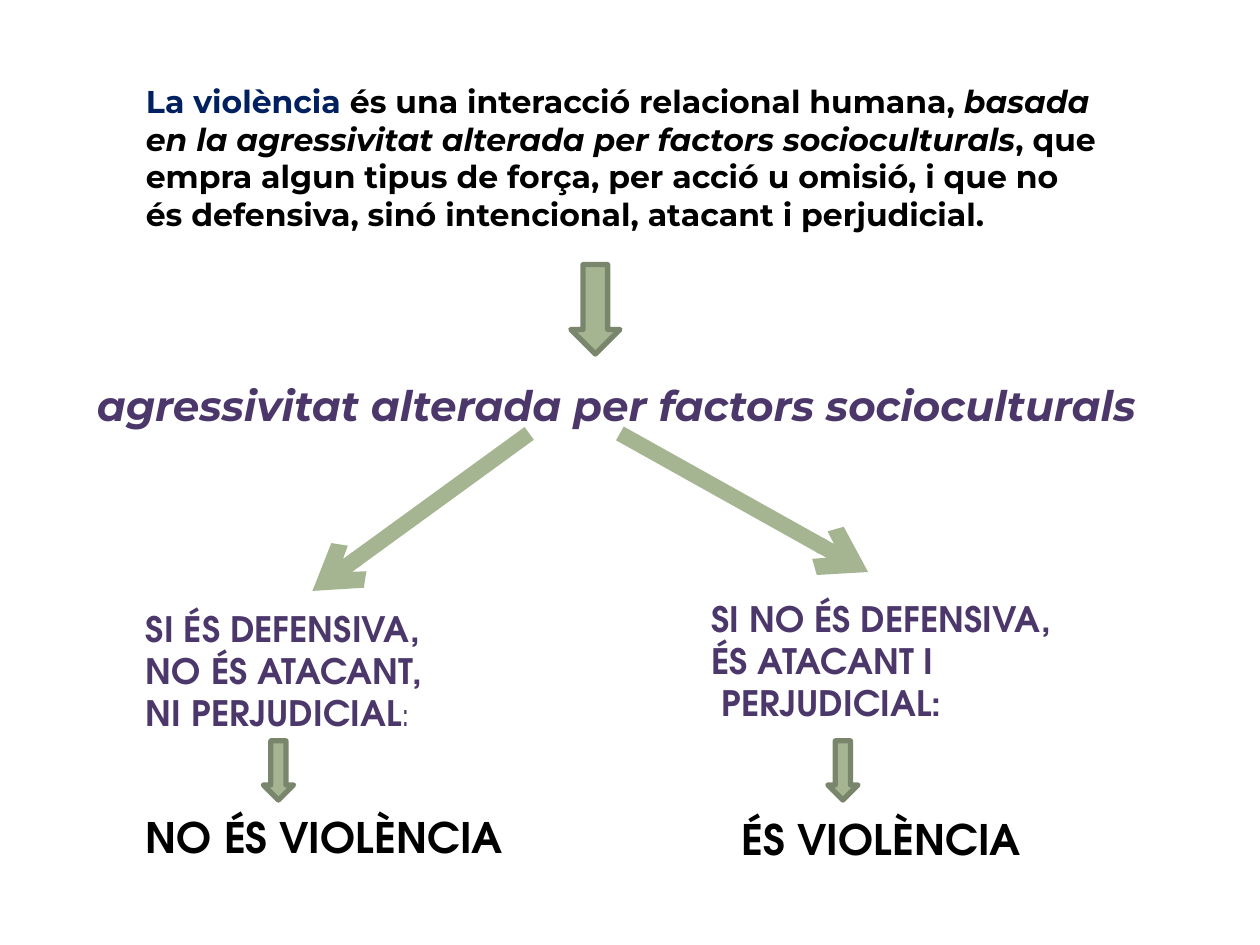
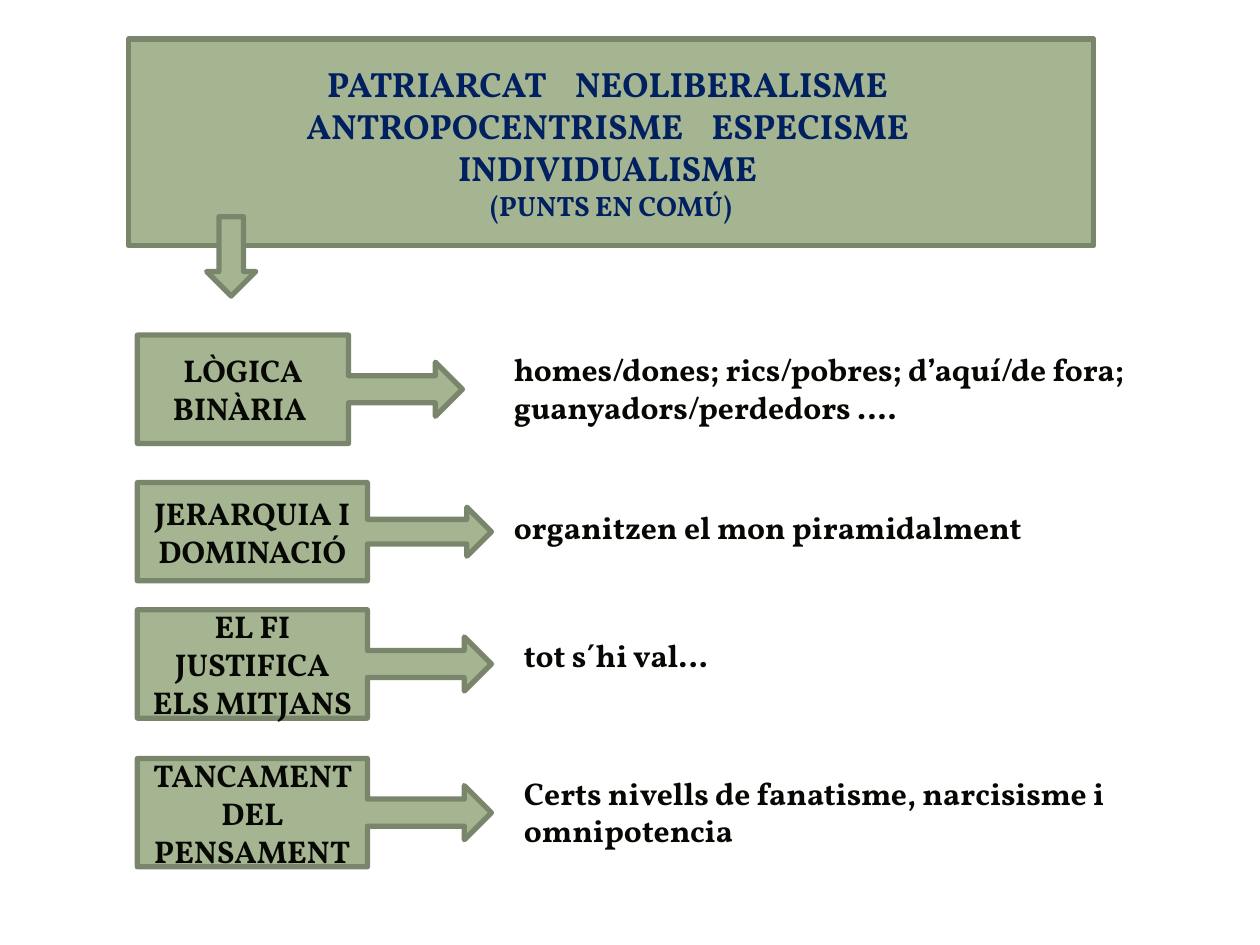
from lxml import etree
from pptx import Presentation
from pptx.dml.color import RGBColor
from pptx.enum.shapes import MSO_CONNECTOR as Connector, MSO_SHAPE as Shape
from pptx.enum.text import MSO_ANCHOR as Anchor, PP_ALIGN as Align
from pptx.oxml.ns import qn
from pptx.util import Inches, Pt

COLORS = {
    "sage": "A5B592",
    "sage_dark": "7A866C",
    "navy": "002060",
    "purple": "4C376B",
    "black": "000000",
    "ink": "070804",
}
SANS, CAPS, SERIF = "Montserrat", "TeX Gyre Adventor", "Vollkorn"
WORD_GAP = (" ", {"spacing": 12})


def color(name):
    return RGBColor.from_string(COLORS[name])


def add_run(paragraph, text, font, size, ink, bold=True, italic=False, spacing=0):
    run = paragraph.add_run()
    run.text = text
    run.font.name = font
    run.font.size = Pt(size)
    run.font.bold = bold
    run.font.italic = italic
    run.font.color.rgb = color(ink)
    if spacing:
        run._r.get_or_add_rPr().set("spc", str(spacing * 100))


def write_text(frame, paragraphs, align=Align.LEFT, **style):
    frame.word_wrap = True
    for index, runs in enumerate(paragraphs):
        paragraph = frame.paragraphs[0] if index == 0 else frame.add_paragraph()
        paragraph.alignment = align
        for run in [runs] if isinstance(runs, str) else runs:
            text, changes = (run, {}) if isinstance(run, str) else run
            add_run(paragraph, text, **{**style, **changes})


def add_text(slide, box, *paragraphs, **style):
    text_box = slide.shapes.add_textbox(*map(Inches, box))
    write_text(text_box.text_frame, paragraphs, **style)


def add_block(slide, kind, box, *paragraphs, **style):
    shape = slide.shapes.add_shape(kind, *map(Inches, box))
    shape.shadow.inherit = False
    shape.fill.solid()
    shape.fill.fore_color.rgb = color("sage")
    shape.line.color.rgb = color("sage_dark")
    shape.line.width = Pt(3)
    if paragraphs:
        shape.text_frame.vertical_anchor = Anchor.MIDDLE
        write_text(shape.text_frame, paragraphs, align=Align.CENTER, **style)


def add_branch(slide, start, end):
    connector = slide.shapes.add_connector(
        Connector.STRAIGHT, *map(Inches, start + end))
    connector.line.color.rgb = color("sage")
    connector.line.width = Pt(9)
    line = connector.line._get_or_add_ln()
    etree.SubElement(line, qn("a:tailEnd"), type="arrow")
    etree.SubElement(connector._element.spPr, qn("a:effectLst"))


def build_violence_slide(slide):
    add_text(
        slide, (1.06, 0.6, 7.8, 1.62),
        [("La violència ", {"ink": "navy"}),
         "és una interacció relacional humana, ",
         ("basada en la agressivitat alterada per factors socioculturals",
          {"italic": True}),
         ", que empra algun tipus de força, per acció u omisió, i que no és "
         "defensiva, sinó intencional, atacant i perjudicial."],
        font=SANS, size=18, ink="black")
    add_text(slide, (0.67, 2.96, 8.98, 0.5),
             "agressivitat alterada per factors socioculturals",
             font=SANS, size=24, ink="purple", italic=True)
    add_block(slide, Shape.DOWN_ARROW, (4.53, 2.1, 0.39, 0.71))

    condition = {"font": CAPS, "size": 20, "ink": "purple"}
    add_text(slide, (1.06, 4.77, 3.22, 1.1),
             "SI ÉS DEFENSIVA,", "NO ÉS ATACANT,",
             ["NI PERJUDICIAL", (":", {"size": 18, "bold": False})], **condition)
    add_text(slide, (5.55, 4.69, 3.21, 1.1),
             "SI NO ÉS DEFENSIVA,", "ÉS ATACANT I", " PERJUDICIAL:", **condition)

    conclusion = {"font": CAPS, "size": 24, "ink": "black"}
    add_text(slide, (1.06, 6.39, 3.22, 0.5), "NO ÉS VIOLÈNCIA", **conclusion)
    add_text(slide, (5.55, 6.41, 2.89, 0.5), "ÉS VIOLÈNCIA",
             align=Align.CENTER, **conclusion)

    add_branch(slide, (4.92, 3.44), (6.89, 4.54))
    add_branch(slide, (4.2, 3.44), (2.48, 4.69))
    for left in (2.09, 6.57):
        add_block(slide, Shape.DOWN_ARROW, (left, 5.88, 0.24, 0.47))


def build_common_points_slide(slide):
    add_block(
        slide, Shape.FLOWCHART_PROCESS, (1.02, 0.31, 7.66, 1.64),
        ["PATRIARCAT", WORD_GAP, "NEOLIBERALISME "],
        ["ANTROPOCENTRISME", WORD_GAP, "ESPECISME "],
        "INDIVIDUALISME ",
        [("(PUNTS EN COMÚ)", {"size": 16})],
        font=SERIF, size=20, ink="navy")
    add_block(slide, Shape.DOWN_ARROW, (1.64, 1.72, 0.39, 0.63))

    points = [
        ("LÒGICA BINÀRIA ", (2.66, 2.58, 0.86),
         "homes/dones; rics/pobres; d’aquí/de fora; guanyadors/perdedors ….",
         (3.98, 2.73, 5.23, 0.71)),
        ("JERARQUIA I DOMINACIÓ", (3.83, 2.81, 0.78),
         "organitzen el mon piramidalment", (3.98, 3.98, 5.31, 0.4)),
        ("EL FI JUSTIFICA ELS MITJANS", (4.84, 2.81, 0.86),
         "tot s´hi val…", (4.06, 5, 5.55, 0.71)),
        ("TANCAMENT DEL PENSAMENT", (6.02, 2.81, 0.86),
         "Certs nivells de fanatisme, narcisisme i omnipotencia",
         (4.06, 6.09, 5.55, 1.01)),
    ]
    style = {"font": SERIF, "size": 18, "ink": "ink"}
    for label, callout, explanation, box in points:
        add_block(slide, Shape.RIGHT_ARROW_CALLOUT, (1.09, *callout), label, **style)
        add_text(slide, box, explanation, **style)


def main():
    presentation = Presentation()
    presentation.slide_width = Inches(10)
    presentation.slide_height = Inches(7.5)
    blank = presentation.slide_layouts[6]
    for build in (build_violence_slide, build_common_points_slide):
        build(presentation.slides.add_slide(blank))
    presentation.save("out.pptx")


if __name__ == "__main__":
    main()
